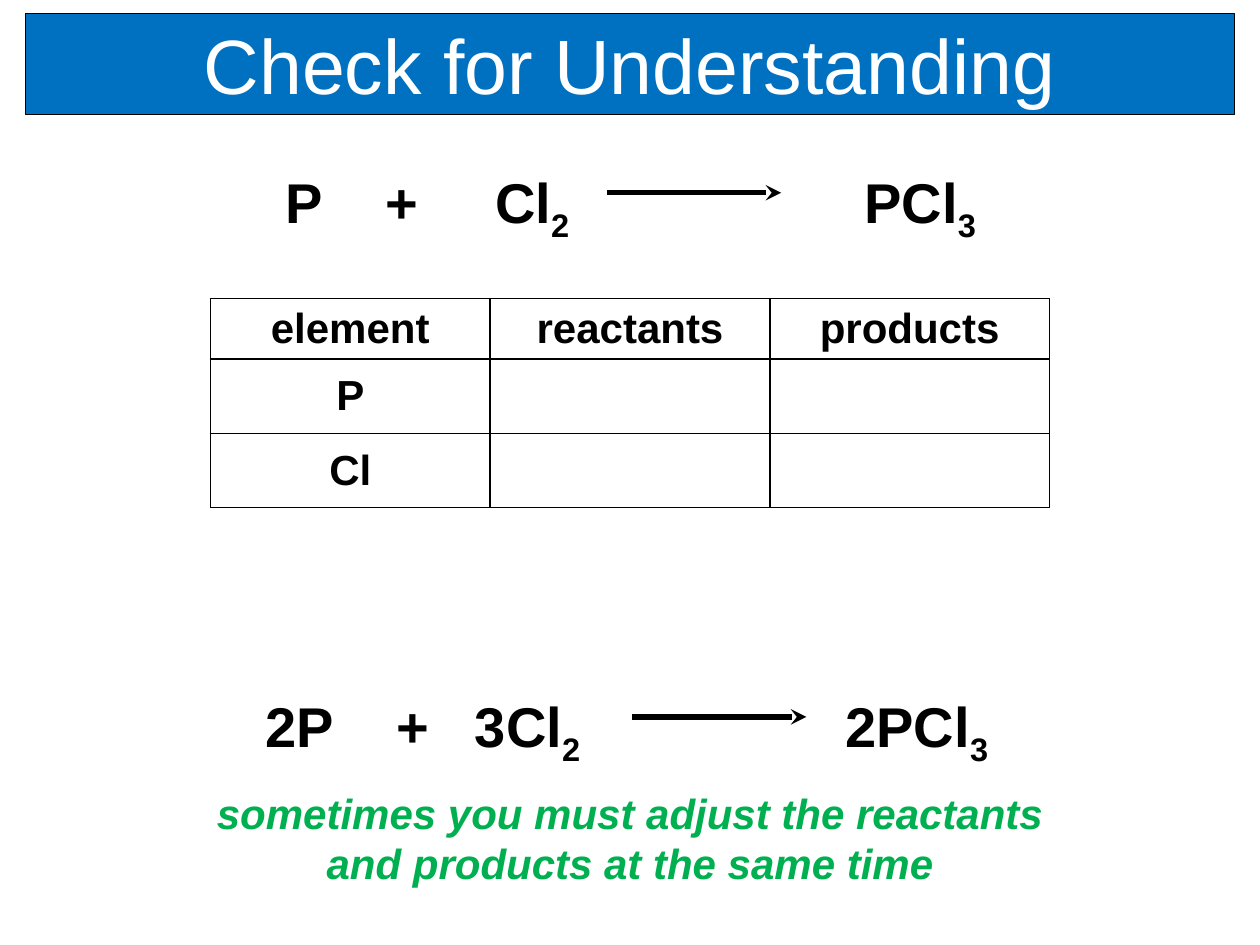
import pptx
import pptx.util
import pptx.dml.color
import pptx.enum.shapes
import pptx.enum.text
import pptx.oxml.ns
import lxml.etree

Inches = pptx.util.Inches
Pt = pptx.util.Pt
qn = pptx.oxml.ns.qn
CENTER = pptx.enum.text.PP_ALIGN.CENTER
MIDDLE = pptx.enum.text.MSO_ANCHOR.MIDDLE


def colour(value):
    return pptx.dml.color.RGBColor.from_string(value)


def add_span(para, text, size=32, color="000000", bold=True, italic=False, baseline=0):
    span = para.add_run()
    span.text = text
    span.font.name = "Arial"
    span.font.size = Pt(size)
    span.font.bold = bold
    span.font.italic = italic
    span.font.color.rgb = colour(color)
    if baseline:
        span._r.get_or_add_rPr().set("baseline", str(baseline * 1000))


deck = pptx.Presentation()
deck.slide_width = Inches(10)
deck.slide_height = Inches(7.5)
page = deck.slides.add_slide(deck.slide_layouts[6])

title = page.shapes.add_shape(
    pptx.enum.shapes.MSO_SHAPE.RECTANGLE, Inches(0.2), Inches(0.11), Inches(9.6), Inches(0.8))
title.shadow.inherit = False
title.fill.solid()
title.fill.fore_color.rgb = colour("0070C0")
title.line.color.rgb = colour("000000")
title.line.width = Pt(0.75)
title.text_frame.vertical_anchor = MIDDLE
title.text_frame.paragraphs[0].alignment = CENTER
add_span(title.text_frame.paragraphs[0], "Check for Understanding", size=44, color="FFFFFF", bold=False)

rows = [("element", "reactants", "products"), ("P", "", ""), ("Cl", "", "")]
table = page.shapes.add_table(3, 3, Inches(1.67), Inches(2.37), Inches(6.66), Inches(1.66)).table
table.first_row = False
table.horz_banding = False
for column in table.columns:
    column.width = Inches(2.22)
for row, height in zip(table.rows, (0.48, 0.59, 0.59)):
    row.height = Inches(height)
for row, labels in zip(table.rows, rows):
    for cell, label in zip(row.cells, labels):
        cell.vertical_anchor = MIDDLE
        para = cell.text_frame.paragraphs[0]
        para.alignment = CENTER
        if label:
            add_span(para, label, size=24)
        properties = cell._tc.get_or_add_tcPr()
        for side in ("a:lnL", "a:lnR", "a:lnT", "a:lnB"):
            border = lxml.etree.SubElement(properties, qn(side), w=str(Pt(1)))
            fill = lxml.etree.SubElement(border, qn("a:solidFill"))
            lxml.etree.SubElement(fill, qn("a:srgbClr"), val="000000")
        cell.fill.background()

equations = [
    (1.33, (2.27, 3.06, 3.93, 6.86), ("P", "+", "Cl", "PCl"), 4.82, 1.53),
    (5.49, (2.11, 3.15, 3.77, 6.71), ("2P", "+", "3Cl", "2PCl"), 5.02, 5.69),
]
subscripts = {2: "2", 3: "3"}
for top, stops, terms, arrow_left, arrow_top in equations:
    box = page.shapes.add_textbox(Inches(stops[0]), Inches(top), Inches(6.1), Inches(0.54))
    frame = box.text_frame
    frame.word_wrap = True
    frame.margin_left = frame.margin_right = frame.margin_top = frame.margin_bottom = 0
    para = frame.paragraphs[0]
    tabs = lxml.etree.SubElement(para._p.get_or_add_pPr(), qn("a:tabLst"))
    for stop in stops[1:]:
        lxml.etree.SubElement(tabs, qn("a:tab"), pos=str(Inches(stop - stops[0])), algn="l")
    for index, term in enumerate(terms):
        add_span(para, "\t" + term if index else term)
        if index in subscripts:
            add_span(para, subscripts[index], baseline=-25)

    arrow = page.shapes.add_connector(
        pptx.enum.shapes.MSO_CONNECTOR.STRAIGHT,
        Inches(arrow_left), Inches(arrow_top), Inches(arrow_left + 1.38), Inches(arrow_top))
    arrow.line.color.rgb = colour("000000")
    arrow.line.width = Pt(3)
    lxml.etree.SubElement(arrow.line._get_or_add_ln(), qn("a:tailEnd"), type="stealth")
    lxml.etree.SubElement(arrow._element.spPr, qn("a:effectLst"))

note = page.shapes.add_textbox(Inches(1.59), Inches(6.2), Inches(6.82), Inches(0.87))
note.text_frame.word_wrap = True
para = note.text_frame.paragraphs[0]
for line in ("sometimes you must adjust the reactants", "and products at the same time"):
    para.alignment = CENTER
    add_span(para, line, size=24, color="00B050", italic=True)
    if line.startswith("sometimes"):
        para = note.text_frame.add_paragraph()

deck.save("out.pptx")
